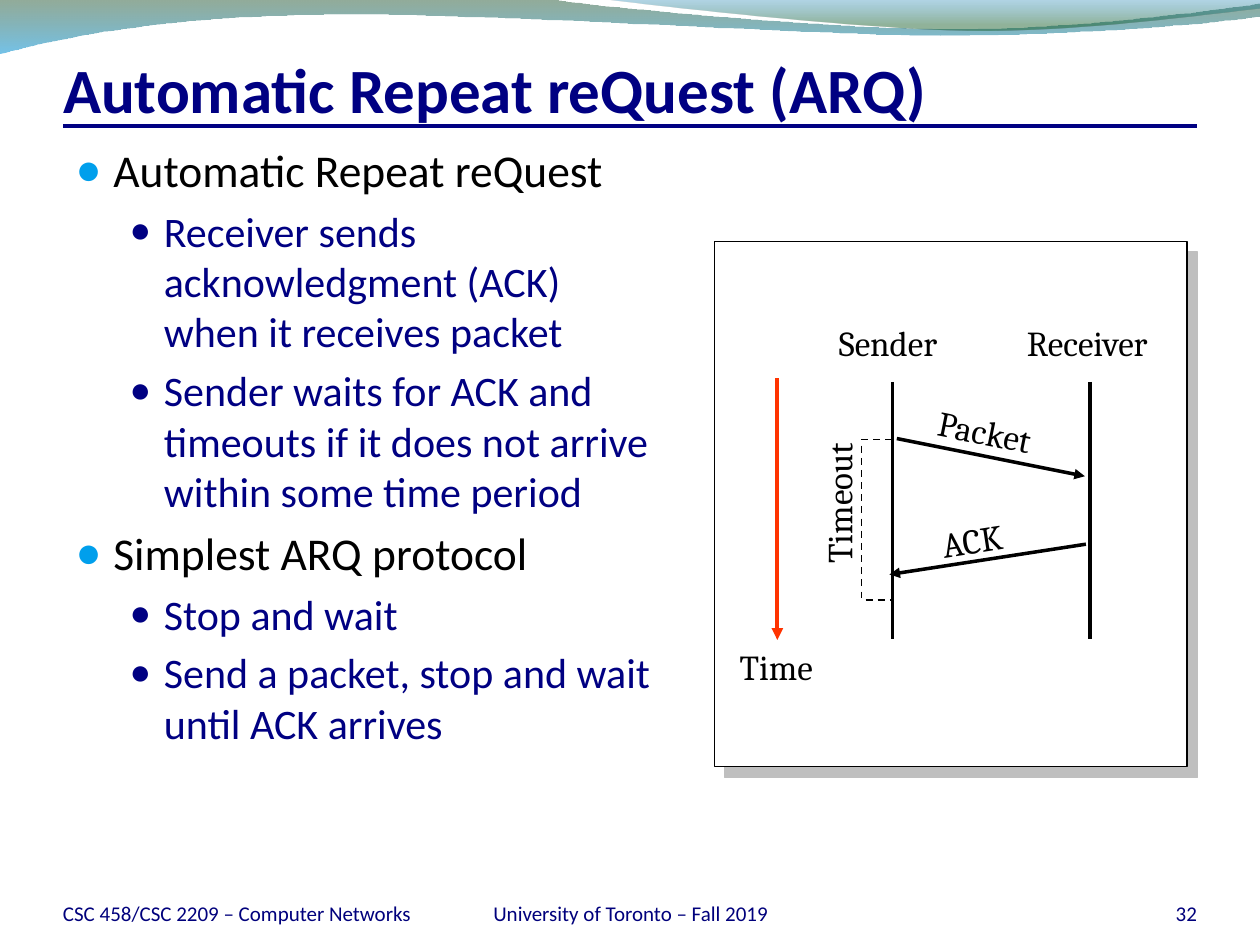
from dataclasses import dataclass

from lxml.etree import SubElement as Sub
from pptx import Presentation
from pptx.dml.color import RGBColor
from pptx.enum.dml import MSO_LINE as Dash
from pptx.enum.shapes import MSO_CONNECTOR as Link, MSO_SHAPE as Shape
from pptx.enum.text import MSO_ANCHOR as Anchor, MSO_AUTO_SIZE as Auto, PP_ALIGN as Align
from pptx.oxml.ns import qn
from pptx.util import Cm, Pt

BLACK = RGBColor(0x00, 0x00, 0x00)
WHITE = RGBColor(0xFF, 0xFF, 0xFF)
NAVY = RGBColor(0x00, 0x00, 0x82)
INK = RGBColor(0x00, 0x00, 0x7C)
SKY = RGBColor(0x00, 0x9F, 0xEC)
RED = RGBColor(0xFF, 0x33, 0x00)
GREY = RGBColor(0xBF, 0xBF, 0xBF)
SANS, SERIF = "Calibri", "Cambria"


@dataclass
class Label:
    text: str
    box: tuple
    turn: float = 0
    font: str = SERIF
    size: int = 20
    color: RGBColor = BLACK
    align: Align = Align.CENTER


@dataclass
class Stroke:
    start: tuple
    end: tuple
    color: RGBColor = BLACK
    width: float = 2
    tip: bool = False


@dataclass
class Level:
    size: int
    color: RGBColor
    dot: RGBColor
    scale: int
    left: float
    hang: float


@dataclass
class Wave:
    start: tuple
    steps: list
    stops: list


LEVELS = [Level(26, BLACK, SKY, 95, 0.76, 0.76), Level(24, NAVY, NAVY, 85, 1.78, 0.69)]
POINTS = [
    (0, "Automatic Repeat reQuest"),
    (1, "Receiver sends acknowledgment (ACK) when it receives packet"),
    (1, "Sender waits for ACK and timeouts if it does not arrive within some time period"),
    (0, "Simplest ARQ protocol"),
    (1, "Stop and wait"),
    (1, "Send a packet, stop and wait until ACK arrives"),
]
WAVES = [
    Wave((0, 0), [
        (11.18, 0),
        (12.09, 0.15, 16.87, 0.58, 19.25, 0.58),
        (21.67, 0.58, 24.33, 0.23, 25.4, 0.08),
        (25.4, 0.33),
        (24.97, 0.41, 22.1, 0.71, 18.95, 0.71),
        (15.8, 0.69, 9.7, 0.25, 6.53, 0.3),
        (3.28, 0.33, 1.17, 0.76, 0, 1.07),
    ], [(0, RGBColor(0x0F, 0x46, 0x1E), 45), (1, RGBColor(0x00, 0x90, 0xD6), 55)]),
    Wave((12.17, 0), [
        (12.93, 0.1, 17.32, 0.58, 19.53, 0.61),
        (21.74, 0.64, 24.41, 0.28, 25.4, 0.18),
        (25.4, 0),
    ], [(0, RGBColor(0x00, 0x76, 0xAF), 30), (0.8, RGBColor(0x0D, 0x58, 0x21), 45)]),
]
LABELS = [
    Label("Time", (14.61, 12.9, 2.08, 1.09)),
    Label("Packet", (18.52, 8.15, 2.67, 1.09), 11.5),
    Label("ACK", (18.62, 10.34, 1.96, 1.09), 351.2),
    Label("Timeout", (15.21, 9.6, 3.38, 1.09), 270),
    Label("Sender", (16.51, 6.35, 2.79, 1.09)),
    Label("Receiver", (20.27, 6.35, 3.3, 1.09)),
]
NOTES = [
    Label("CSC 458/CSC 2209 – Computer Networks", (1.27, 17.65, 7.2, 1.02), align=Align.LEFT),
    Label("University of Toronto – Fall 2019", (8.69, 17.65, 8.05, 1.02)),
    Label("32", (22.02, 17.65, 2.11, 1.02), align=Align.RIGHT),
]
STROKES = [
    Stroke((21.97, 7.7), (21.97, 12.88)),
    Stroke((17.99, 7.7), (17.99, 12.88)),
    Stroke((18.08, 8.84), (21.87, 9.6), tip=True),
    Stroke((21.89, 10.97), (17.93, 11.58), tip=True),
    Stroke((15.67, 7.62), (15.67, 12.9), RED, 2.25, True),
]
SPAN = [(17.98, 8.86), (17.37, 8.86), (17.37, 12.09), (17.98, 12.09)]


def trace(start: tuple, steps: list) -> list:
    dots = [start]
    for step in steps:
        if len(step) == 2:
            dots.append(step)
            continue
        ax, ay = dots[-1]
        bx, by, cx, cy, dx, dy = step
        for i in range(1, 17):
            t = i / 16
            u = 1 - t
            k = u ** 3, 3 * u * u * t, 3 * u * t * t, t ** 3
            dots.append((k[0] * ax + k[1] * bx + k[2] * cx + k[3] * dx,
                         k[0] * ay + k[1] * by + k[2] * cy + k[3] * dy))
    return dots


def outline(shapes, dots: list, close: bool):
    first, *rest = [(Cm(x), Cm(y)) for x, y in dots]
    pen = shapes.build_freeform(*first)
    pen.add_line_segments(rest, close=close)
    form = pen.convert_to_shape()
    form.shadow.inherit = False
    return form


def add_wave(shapes, wave: Wave) -> None:
    form = outline(shapes, trace(wave.start, wave.steps), True)
    form.line.fill.background()
    form.fill.gradient()
    form.fill.gradient_angle = 270
    for stop, (place, color, alpha) in zip(form.fill.gradient_stops, wave.stops):
        stop.position = place
        stop.color.rgb = color
        tone = next(form._element.iter(qn("a:gradFill"))).findall(".//" + qn("a:srgbClr"))[-1]
        for node in form._element.iter(qn("a:srgbClr")):
            if node.get("val") == str(color):
                tone = node
        Sub(tone, qn("a:alpha"), val=str(alpha * 1000))


def add_stroke(shapes, item: Stroke) -> None:
    ends = [Cm(n) for n in item.start + item.end]
    link = shapes.add_connector(Link.STRAIGHT, *ends)
    link.line.color.rgb = item.color
    link.line.width = Pt(item.width)
    if item.tip:
        Sub(link.line._get_or_add_ln(), qn("a:tailEnd"), type="triangle")
    Sub(link._element.spPr, qn("a:effectLst"))


def add_run(para, text: str, font: str, size: int, color: RGBColor, bold: bool = False) -> None:
    run = para.add_run()
    run.text = text
    run.font.name = font
    run.font.size = Pt(size)
    run.font.color.rgb = color
    run.font.bold = bold


def add_label(shapes, item: Label):
    box = shapes.add_textbox(*map(Cm, item.box))
    box.rotation = item.turn
    frame = box.text_frame
    frame.word_wrap = False
    frame.vertical_anchor = Anchor.MIDDLE
    para = frame.paragraphs[0]
    para.alignment = item.align
    add_run(para, item.text, item.font, item.size, item.color)
    return frame


def add_note(shapes, item: Label) -> None:
    item.font, item.size, item.color = SANS, 12, INK
    frame = add_label(shapes, item)
    frame.word_wrap = True
    frame.vertical_anchor = Anchor.BOTTOM
    frame.margin_left = frame.margin_right = frame.margin_top = frame.margin_bottom = 0


def add_panel(shapes) -> None:
    panel = shapes.add_shape(Shape.RECTANGLE, Cm(14.4), Cm(4.87), Cm(9.53), Cm(10.59))
    panel.fill.solid()
    panel.fill.fore_color.rgb = WHITE
    panel.line.color.rgb = BLACK
    panel.line.width = Pt(0.75)
    list_ = Sub(panel._element.spPr, qn("a:effectLst"))
    shade = Sub(list_, qn("a:outerShdw"), dist=str(Pt(8.5)), dir="2700000", algn="ctr", rotWithShape="0")
    Sub(shade, qn("a:srgbClr"), val=str(GREY))


def place(shape, *box: float):
    shape.left, shape.top, shape.width, shape.height = map(Cm, box)
    shape.text_frame.auto_size = Auto.NONE
    return shape.text_frame


def fill_title(shape) -> None:
    frame = place(shape, 1.27, 0.84, 22.86, 1.7)
    frame.vertical_anchor = Anchor.BOTTOM
    frame.margin_left = frame.margin_right = frame.margin_bottom = 0
    frame.paragraphs[0].alignment = Align.LEFT
    add_run(frame.paragraphs[0], "Automatic Repeat reQuest (ARQ)", SANS, 36, NAVY, True)


def fill_body(shape) -> None:
    frame = place(shape, 1.27, 2.74, 12.27, 14.91)
    for i, (depth, text) in enumerate(POINTS):
        para = frame.add_paragraph() if i else frame.paragraphs[0]
        para.level = depth
        level = LEVELS[depth]
        props = para._p.get_or_add_pPr()
        props.set("marL", str(Cm(level.left)))
        props.set("indent", str(-Cm(level.hang)))
        Sub(Sub(props, qn("a:buClr")), qn("a:srgbClr"), val=str(level.dot))
        Sub(props, qn("a:buSzPct"), val=str(level.scale * 1000))
        Sub(props, qn("a:buChar"), char="●")
        add_run(para, text, SANS, level.size, level.color)


def main() -> None:
    deck = Presentation()
    deck.slide_width, deck.slide_height = Cm(25.4), Cm(19.05)
    slide = deck.slides.add_slide(deck.slide_layouts[1])
    shapes = slide.shapes
    fill_title(shapes.title)
    fill_body(slide.placeholders[1])
    for wave in WAVES:
        add_wave(shapes, wave)
    add_stroke(shapes, Stroke((1.27, 2.54), (24.13, 2.54), NAVY, 2.25))
    for note in NOTES:
        add_note(shapes, note)
    add_panel(shapes)
    span = outline(shapes, SPAN, False)
    span.fill.background()
    span.line.color.rgb = BLACK
    span.line.width = Pt(1)
    span.line.dash_style = Dash.DASH
    for item in STROKES:
        add_stroke(shapes, item)
    for item in LABELS:
        add_label(shapes, item)
    deck.save("out.pptx")


if __name__ == "__main__":
    main()
